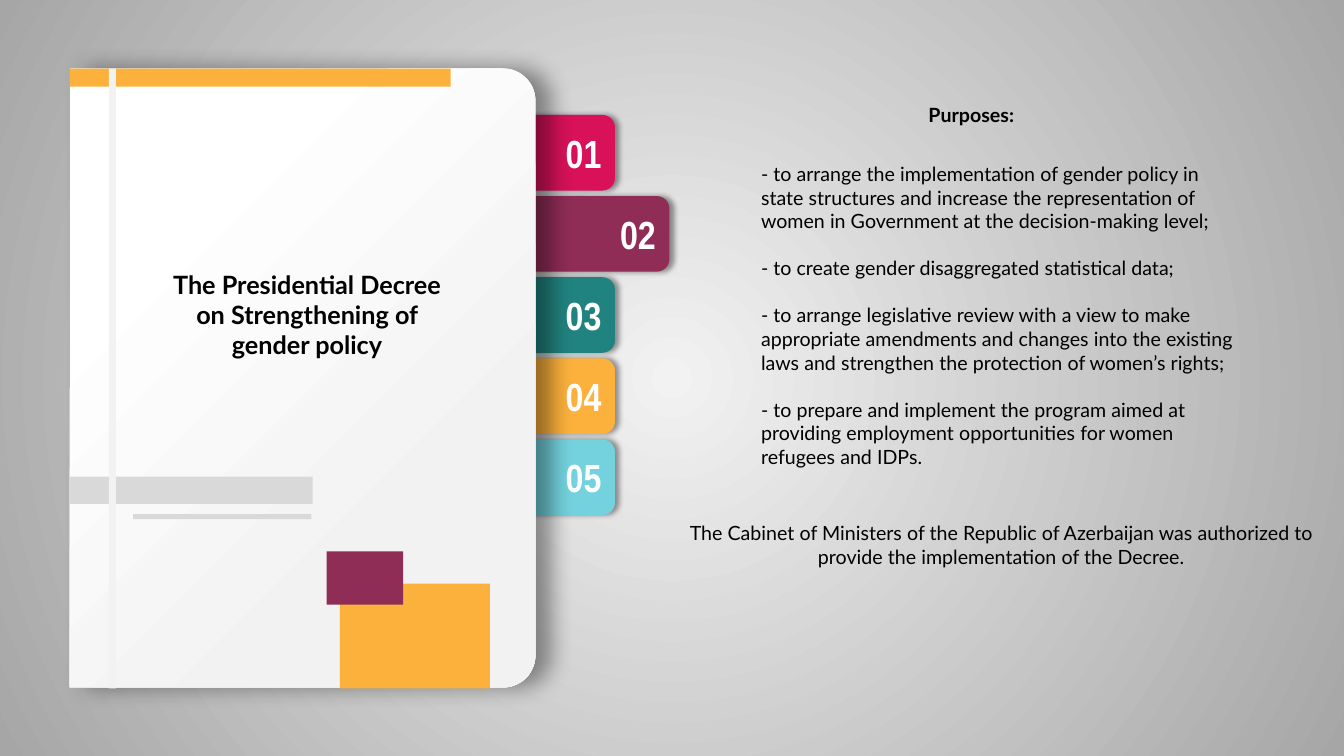
from math import cos, radians, sin

from lxml import etree
from pptx import Presentation
from pptx.dml.color import RGBColor
from pptx.enum.shapes import MSO_SHAPE
from pptx.enum.text import MSO_ANCHOR, PP_ALIGN
from pptx.oxml import parse_xml
from pptx.oxml.ns import nsdecls, qn
from pptx.util import Inches, Pt

RECT, ROUNDED = MSO_SHAPE.RECTANGLE, MSO_SHAPE.ROUNDED_RECTANGLE
LEFT, CENTER, RIGHT = PP_ALIGN.LEFT, PP_ALIGN.CENTER, PP_ALIGN.RIGHT
TOP, MIDDLE = MSO_ANCHOR.TOP, MSO_ANCHOR.MIDDLE

BLACK = RGBColor(0x00, 0x00, 0x00)
WHITE = RGBColor(0xFF, 0xFF, 0xFF)
PALE = RGBColor(0xF2, 0xF2, 0xF2)
SILVER = RGBColor(0xD9, 0xD9, 0xD9)
GREY = RGBColor(0xA6, 0xA6, 0xA6)
PINK = RGBColor(0xD8, 0x11, 0x59)
PLUM = RGBColor(0x8F, 0x2D, 0x56)
TEAL = RGBColor(0x21, 0x83, 0x80)
AMBER = RGBColor(0xFB, 0xB1, 0x3C)
AQUA = RGBColor(0x73, 0xD2, 0xDE)


def cast_shadow(shape, blur, distance):
    shape.shadow.inherit = False
    effects = shape._element.spPr.find(qn("a:effectLst"))
    effects.append(parse_xml(
        f'<a:outerShdw {nsdecls("a")} blurRad="{Pt(blur)}" dist="{Pt(distance)}" '
        'dir="0" algn="l" rotWithShape="0"><a:srgbClr val="000000">'
        '<a:alpha val="40000"/></a:srgbClr></a:outerShdw>'))


def write(shape, paragraphs, size, font="Lato", color=BLACK, bold=False,
          align=LEFT, anchor=TOP, wrap=True, gap=0):
    frame = shape.text_frame
    frame.word_wrap = wrap
    frame.vertical_anchor = anchor
    frame.text = "\n".join(paragraphs)
    for i, paragraph in enumerate(frame.paragraphs):
        paragraph.alignment = align
        paragraph.space_before = Pt(gap if i else 0)
        paragraph.font.name = font
        paragraph.font.size = Pt(size)
        paragraph.font.bold = bold
        paragraph.font.color.rgb = color


prs = Presentation()
prs.slide_width, prs.slide_height = Inches(13.33), Inches(7.5)
slide = prs.slides.add_slide(prs.slide_layouts[5])
shapes = slide.shapes

# Radial background
backdrop = slide.background.fill
backdrop.gradient()
for stop, position, color in zip(backdrop.gradient_stops, (0, 1), (PALE, GREY)):
    stop.position, stop.color.rgb = position, color
gradient = slide.element.find(".//" + qn("a:gradFill"))
gradient.remove(gradient.find(qn("a:lin")))
radial = etree.SubElement(gradient, qn("a:path"), path="circle")
etree.SubElement(radial, qn("a:fillToRect"), l="50000", t="50000", r="50000", b="50000")

# Numbered tabs, the last one at the back
tabs = [("01", PINK, 1.63), ("02", PLUM, 2.17), ("03", TEAL, 1.63),
        ("04", AMBER, 1.63), ("05", AQUA, 1.63)]
for i, (number, color, width) in reversed(list(enumerate(tabs))):
    tab = shapes.add_shape(ROUNDED, Inches(4.47), Inches(1.14 + 0.805 * i),
                           Inches(width), Inches(0.75))
    tab.fill.solid()
    tab.fill.fore_color.rgb = color
    tab.line.fill.background()
    cast_shadow(tab, 4, 3)
    write(tab, [number], 28, "Arial Narrow", WHITE, True, RIGHT, MIDDLE)

# Notebook cover, rounded on the right
cover_left, cover_top, cover_right, cover_bottom, radius = 0.69, 0.68, 5.31, 6.82, 0.32
outline = []
for center_y, start in ((cover_top + radius, -90), (cover_bottom - radius, 0)):
    for angle in range(start, start + 91, 5):
        outline.append((Inches(cover_right - radius + radius * cos(radians(angle))),
                        Inches(center_y + radius * sin(radians(angle)))))
outline.append((Inches(cover_left), Inches(cover_bottom)))
builder = shapes.build_freeform(Inches(cover_left), Inches(cover_top))
builder.add_line_segments(outline, close=True)
cover = builder.convert_to_shape()
cover.fill.gradient()
cover.fill.gradient_angle = 315
for stop, position, color in zip(cover.fill.gradient_stops, (0.22, 0.74), (WHITE, PALE)):
    stop.position, stop.color.rgb = position, color
cover.line.fill.background()
cast_shadow(cover, 16, 12)

# Cover decoration
for left, top, width, height, color in [
    (0.69, 0.68, 3.78, 0.18, AMBER),
    (0.69, 4.73, 2.41, 0.27, SILVER),
    (1.08, 0.68, 0.07, 6.15, PALE),
    (1.32, 5.1, 1.77, 0.05, SILVER),
    (3.37, 5.79, 1.49, 1.04, AMBER),
    (3.24, 5.47, 0.76, 0.53, PLUM),
]:
    block = shapes.add_shape(RECT, Inches(left), Inches(top), Inches(width), Inches(height))
    block.fill.solid()
    block.fill.fore_color.rgb = color
    block.line.fill.background()
    block.shadow.inherit = False

# Title, brought in front of the cover
title = shapes.title
title.left, title.top = Inches(1.47), Inches(2.62)
title.width, title.height = Inches(3.15), Inches(1.01)
write(title, ["The Presidential Decree on Strengthening of gender policy"], 18,
      bold=True, align=CENTER)
shapes._spTree.append(title._element)

# Purposes and closing note
purposes = shapes.add_textbox(Inches(7.45), Inches(1.56), Inches(4.96), Inches(3.17))
write(purposes, [
    "-\N{NO-BREAK SPACE}to arrange the implementation of gender policy in state structures and "
    "increase the representation of women in Government at the decision-making level;",
    "-\N{NO-BREAK SPACE}to create gender disaggregated statistical data;",
    "-\N{NO-BREAK SPACE}to arrange legislative review with a view to make appropriate amendments "
    "and changes into the existing laws and strengthen the protection of women’s rights;",
    "-\N{NO-BREAK SPACE}to prepare and implement the program aimed at providing employment "
    "opportunities for women refugees and IDPs.",
], 14, gap=16.8)

closing = shapes.add_textbox(Inches(6.6), Inches(5.12), Inches(6.66), Inches(0.57))
write(closing, ["The Cabinet of Ministers of the Republic of Azerbaijan was authorized to "
                "provide the implementation of the Decree."], 14, align=CENTER)

heading = shapes.add_textbox(Inches(9.11), Inches(0.97), Inches(1.16), Inches(0.34))
write(heading, ["Purposes:"], 14, bold=True, wrap=False)

prs.save("out.pptx")
